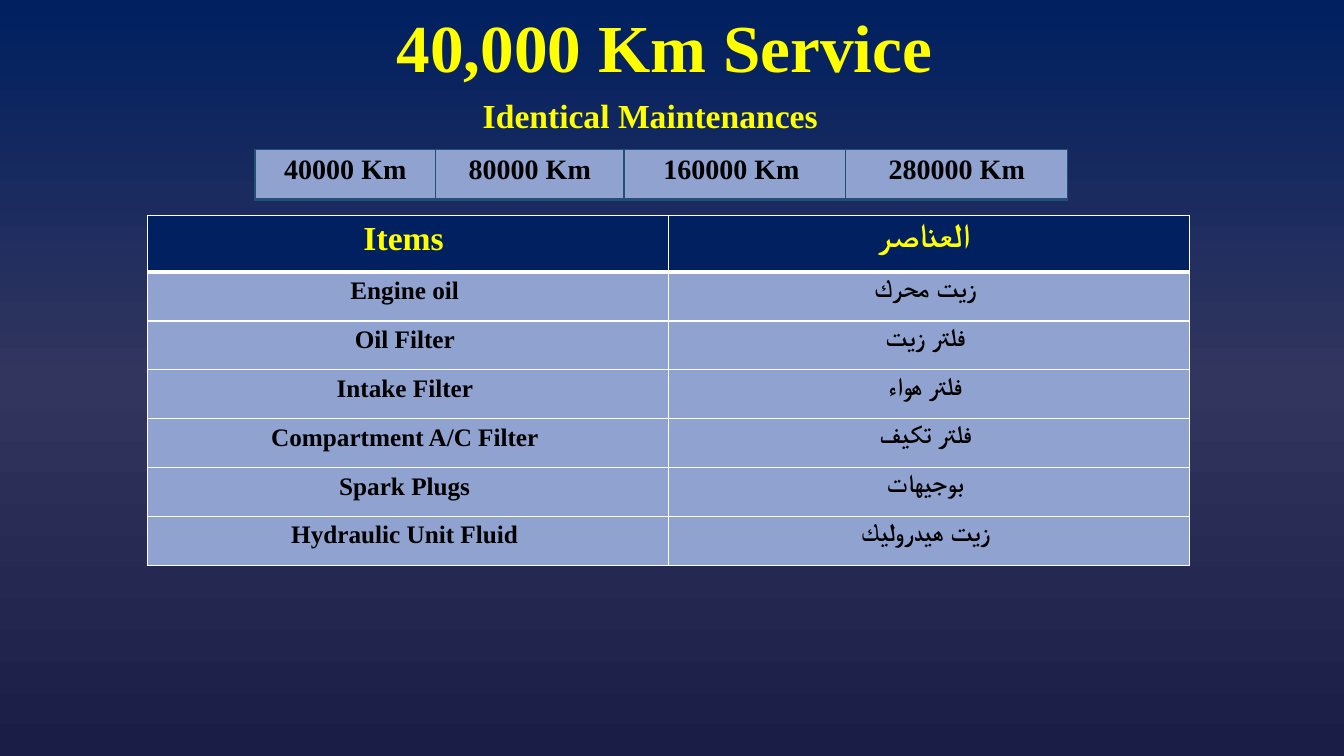
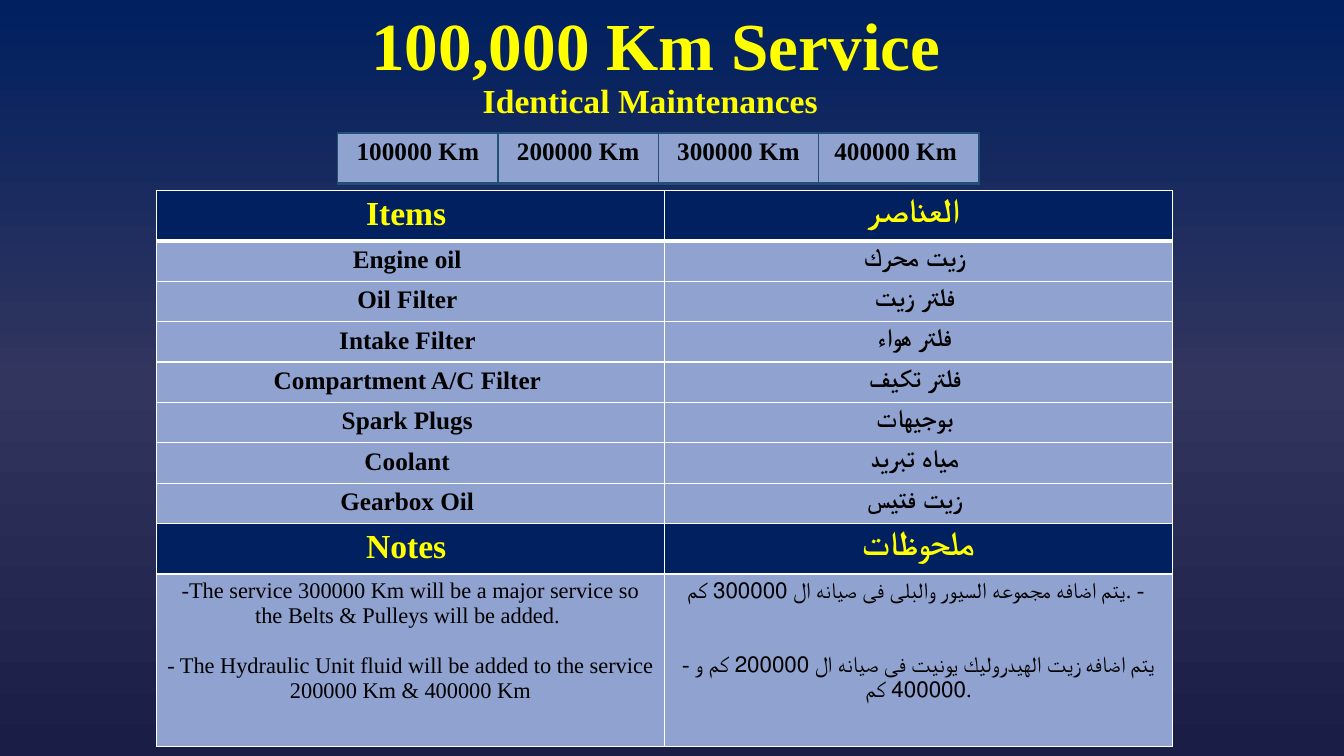
from copy import deepcopy
from dataclasses import dataclass

from lxml import etree
from pptx import Presentation
from pptx.dml.color import RGBColor
from pptx.enum.text import MSO_ANCHOR, PP_ALIGN
from pptx.oxml.ns import qn
from pptx.util import Inches, Pt

CENTER = PP_ALIGN.CENTER
MIDDLE = MSO_ANCHOR.MIDDLE

NAVY = RGBColor(0x00, 0x20, 0x60)
SLATE = RGBColor(0x32, 0x35, 0x5E)
DUSK = RGBColor(0x1A, 0x1E, 0x47)
YELLOW = RGBColor(0xFF, 0xFF, 0x00)
BLACK = RGBColor(0x00, 0x00, 0x00)
WHITE = RGBColor(0xFF, 0xFF, 0xFF)
PERI = RGBColor(0x90, 0xA2, 0xCF)
STEEL = RGBColor(0x22, 0x4F, 0x76)

FONT = "Times New Roman"
EDGES = ("a:lnL", "a:lnR", "a:lnT", "a:lnB")


@dataclass(frozen=True)
class Look:
    size: int
    color: RGBColor
    bold: bool = True
    fill: RGBColor = PERI


TITLE = Look(48, YELLOW)
SUB = Look(24, YELLOW)
HEAD = Look(24, YELLOW, fill=NAVY)
ITEM = Look(18, BLACK)
NOTE = Look(16, BLACK, bold=False)


@dataclass(frozen=True)
class Row:
    cells: tuple[str, ...]
    height: float
    look: Look
    gaps: tuple[int, ...] = (0, 0)  # points between paragraphs, per cell


@dataclass(frozen=True)
class Grid:
    left: float
    top: float
    cols: tuple[float, ...]
    rows: tuple[Row, ...]
    line: RGBColor
    thick: int  # weight of the rule below the first row


@dataclass(frozen=True)
class Page:
    title: str
    tall: float
    sub: float
    strip: Grid
    chart: Grid


HEADER = ("Items ", "العناصر ")
COMMON = (
    ("Engine oil ", "زيت محرك "),
    ("Oil Filter ", "فلتر زيت "),
    ("Intake Filter ", "فلتر هواء "),
    ("Compartment A/C Filter ", "فلتر تكيف "),
    ("Spark Plugs ", "بوجيهات "),
)
FLUID = (("Hydraulic Unit Fluid ", "زيت هيدروليك "),)
MAJOR = (("Coolant ", "مياه تبريد "), ("Gearbox Oil ", "زيت فتيس "))
NOTES = (
    "-The service 300000 Km will be a major service so the Belts & Pulleys will be added. \n"
    "- The Hydraulic Unit fluid will be added to the service 200000 Km & 400000 Km",
    "يتم اضافه مجموعه السيور والبلى فى صيانه ال 300000 كم. - \n"
    "- يتم اضافه زيت الهيدروليك يونيت فى صيانه ال 200000 كم و 400000 كم.",
)


def items(pairs: tuple[tuple[str, str], ...], total: float) -> tuple[Row, ...]:
    """Share the total height equally among the item rows."""
    return tuple(Row(pair, total / len(pairs), ITEM) for pair in pairs)


PAGES = (
    Page(
        "40,000 Km Service", 0.8, 0.89,
        Grid(2.53, 1.48, (1.79, 1.87, 2.2, 2.2),
             (Row(("40000 Km", "80000 Km", "160000 Km ", "280000 Km"),
                  0.5, Look(20, BLACK), (0,) * 4),), STEEL, 2),
        Grid(1.46, 2.14, (5.17,) * 2,
             (Row(HEADER, 0.56, HEAD), *items(COMMON + FLUID, 2.91)), WHITE, 3),
    ),
    Page(
        "100,000 Km Service ", 0.76, 0.74,
        Grid(3.35, 1.32, (1.59,) * 4,
             (Row(("100000 Km", "200000 Km", "300000 Km", "400000 Km "),
                  0.5, ITEM, (0,) * 4),), STEEL, 2),
        Grid(1.55, 1.89, (5.04,) * 2,
             (Row(HEADER, 0.5, HEAD), *items(COMMON + MAJOR, 2.8),
              Row(("Notes ", "ملحوظات"), 0.5, HEAD),
              Row(NOTES, 1.71, NOTE, (18, 35))), WHITE, 3),
    ),
)


def write(frame, text: str, look: Look, gap: int = 0) -> None:
    """Fill a text frame with one centred paragraph per line of text."""
    style = {"name": FONT, "size": Pt(look.size), "bold": look.bold}
    for i, line in enumerate(text.split("\n")):
        para = frame.add_paragraph() if i else frame.paragraphs[0]
        para.alignment = CENTER
        if i:
            para.space_before = Pt(gap)
        run = para.add_run()
        run.text = line
        for key, value in style.items():
            setattr(run.font, key, value)
        run.font.color.rgb = look.color


def border(cell, color: RGBColor, widths: tuple[int, ...]) -> None:
    """Draw left, right, top and bottom rules ahead of the cell fill."""
    props = cell._tc.get_or_add_tcPr()
    for i, (edge, width) in enumerate(zip(EDGES, widths)):
        rule = etree.Element(qn(edge), w=str(Pt(width)))
        solid = etree.SubElement(rule, qn("a:solidFill"))
        etree.SubElement(solid, qn("a:srgbClr"), val=str(color))
        props.insert(i, rule)


def draw_grid(slide, grid: Grid) -> None:
    high = sum(row.height for row in grid.rows)
    table = slide.shapes.add_table(
        len(grid.rows), len(grid.cols), Inches(grid.left), Inches(grid.top),
        Inches(sum(grid.cols)), Inches(high)).table
    table.first_row = table.horz_banding = False
    for col, width in zip(table.columns, grid.cols):
        col.width = Inches(width)
    for r, row in enumerate(grid.rows):
        table.rows[r].height = Inches(row.height)
        above = grid.thick if r == 1 else 1
        below = grid.thick if r == 0 else 1
        for c, (text, gap) in enumerate(zip(row.cells, row.gaps)):
            cell = table.cell(r, c)
            cell.fill.solid()
            cell.fill.fore_color.rgb = row.look.fill
            border(cell, grid.line, (1, 1, above, below))
            write(cell.text_frame, text, row.look, gap)


def draw_page(prs, page: Page) -> None:
    slide = prs.slides.add_slide(prs.slide_layouts[5])
    title = slide.shapes.title
    place = {"left": 0.84, "top": 0.1, "width": 11.5, "height": page.tall}
    for key, value in place.items():
        setattr(title, key, Inches(value))
    title.text_frame.vertical_anchor = MIDDLE
    write(title.text_frame, page.title, TITLE)
    title.text_frame.paragraphs[0].line_spacing = 0.9
    draw_grid(slide, page.strip)
    box = slide.shapes.add_textbox(
        Inches(3.72), Inches(page.sub), Inches(5.46), Inches(0.5))
    box.text_frame.word_wrap = True
    write(box.text_frame, "Identical Maintenances", SUB)
    draw_grid(slide, page.chart)


def paint(master) -> None:
    """Give the master its three-stop vertical gradient."""
    fill = master.background.fill
    fill.gradient()
    fill.gradient_angle = 270
    stops = master.element.find(".//" + qn("a:gsLst"))
    stops.append(deepcopy(stops[-1]))
    for stop, spot, color in zip(
            fill.gradient_stops, (0, 0.5, 1), (NAVY, SLATE, DUSK)):
        stop.position = spot
        stop.color.rgb = color


def main() -> None:
    prs = Presentation()
    prs.slide_width = Inches(13.33)
    prs.slide_height = Inches(7.5)
    paint(prs.slide_master)
    for page in PAGES:
        draw_page(prs, page)
    prs.save("out.pptx")


if __name__ == "__main__":
    main()
